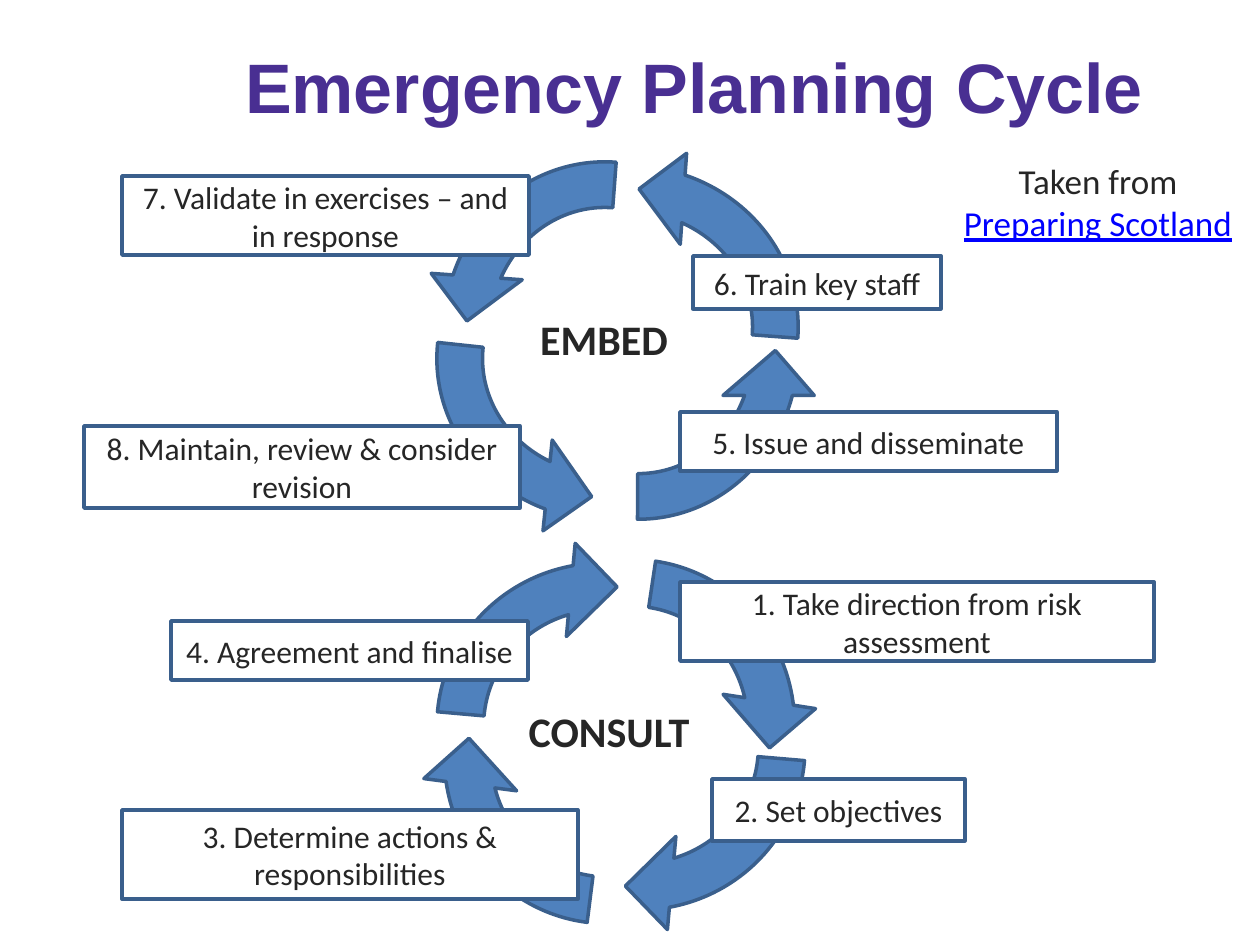
from pptx import Presentation
from pptx.dml.color import RGBColor
from pptx.enum.shapes import MSO_SHAPE
from pptx.enum.text import MSO_ANCHOR, PP_ALIGN
from pptx.util import Pt

CIRCULAR_ARROW = MSO_SHAPE.CIRCULAR_ARROW
RECTANGLE = MSO_SHAPE.RECTANGLE
MIDDLE = MSO_ANCHOR.MIDDLE
CENTER = PP_ALIGN.CENTER

EMU_PER_PX = 914400 / 126
COLOURS = {
    "title": "492F92",
    "text": "262626",
    "link": "0000FF",
    "arrow": "4F81BD",
    "outline": "3A5F8C",
    "white": "FFFFFF",
}
ARROW_ADJUSTMENTS = (0.125, 11.42, 204.58, 161.81, 0.125)

EMBED_SIZE = (365, 383)
EMBED_ARROWS = [(447, 134, 94), (456, 159, 180), (423, 169, 275.8), (421, 139, 4)]
CONSULT_SIZE = (374, 381)
CONSULT_ARROWS = [(417, 536, 275.4), (444, 536, 8.8), (451, 556, 95.2), (421, 566, 187.5)]

STEPS = [
    ("1. Take direction from risk assessment", (680, 582, 474, 79)),
    ("2. Set objectives", (712, 779, 253, 62)),
    ("3. Determine actions & responsibilities", (122, 810, 456, 89)),
    ("4. Agreement and finalise", (171, 621, 357, 59)),
    ("5. Issue and disseminate", (680, 412, 377, 59)),
    ("6. Train key staff", (693, 256, 248, 53)),
    ("7. Validate in exercises – and in response", (122, 176, 407, 79)),
    ("8. Maintain, review & consider revision", (84, 426, 436, 82)),
]


def px(length):
    return round(length * EMU_PER_PX)


def colour(name):
    return RGBColor.from_string(COLOURS[name])


def write(frame, text, size=18, font="Calibri", ink="text", bold=False, underline=False):
    frame.word_wrap = True
    frame.vertical_anchor = MIDDLE
    para = frame.paragraphs[0]
    para.alignment = CENTER
    span = para.add_run()
    span.text = text
    span.font.size = Pt(size)
    span.font.name = font
    span.font.bold = bold
    span.font.underline = underline
    span.font.color.rgb = colour(ink)


def add_outlined(slide, kind, place, fill):
    shape = slide.shapes.add_shape(kind, *map(px, place))
    shape.shadow.inherit = False
    shape.fill.solid()
    shape.fill.fore_color.rgb = colour(fill)
    shape.line.color.rgb = colour("outline")
    shape.line.width = Pt(2)
    return shape


def add_arrow(slide, place, rotation, flipped):
    arrow = add_outlined(slide, CIRCULAR_ARROW, place, "arrow")
    for index, value in enumerate(ARROW_ADJUSTMENTS):
        arrow.adjustments[index] = value
    arrow.rotation = rotation
    if flipped:
        arrow.element.spPr.get_or_add_xfrm().set("flipH", "1")


def add_ring(slide, arrows, size, flipped):
    for left, top, rotation in arrows:
        add_arrow(slide, (left, top, *size), rotation, flipped)


def add_label(slide, place):
    return slide.shapes.add_textbox(*map(px, place)).text_frame


def add_title(slide, text):
    title = slide.shapes.title
    title.left, title.top, title.width, title.height = map(px, (127, 37, 1134, 97))
    write(title.text_frame, text, size=40, font="Arial", ink="title", bold=True)


def main():
    deck = Presentation()
    deck.slide_width, deck.slide_height = px(1260), px(945)
    slide = deck.slides.add_slide(deck.slide_layouts[5])
    add_title(slide, "Emergency Planning Cycle")

    add_ring(slide, CONSULT_ARROWS, CONSULT_SIZE, flipped=False)
    add_ring(slide, EMBED_ARROWS, EMBED_SIZE, flipped=True)
    for text, place in STEPS:
        box = add_outlined(slide, RECTANGLE, place, "white")
        write(box.text_frame, text)

    write(add_label(slide, (480, 312, 248, 53)), "EMBED", size=24, bold=True)
    write(add_label(slide, (485, 704, 248, 53)), "CONSULT", size=24, bold=True)
    credit = add_label(slide, (942, 175, 312, 53))
    write(credit, "Taken from ", size=20)
    write(credit, "Preparing Scotland", size=20, ink="link", underline=True)

    deck.save("out.pptx")


if __name__ == "__main__":
    main()
